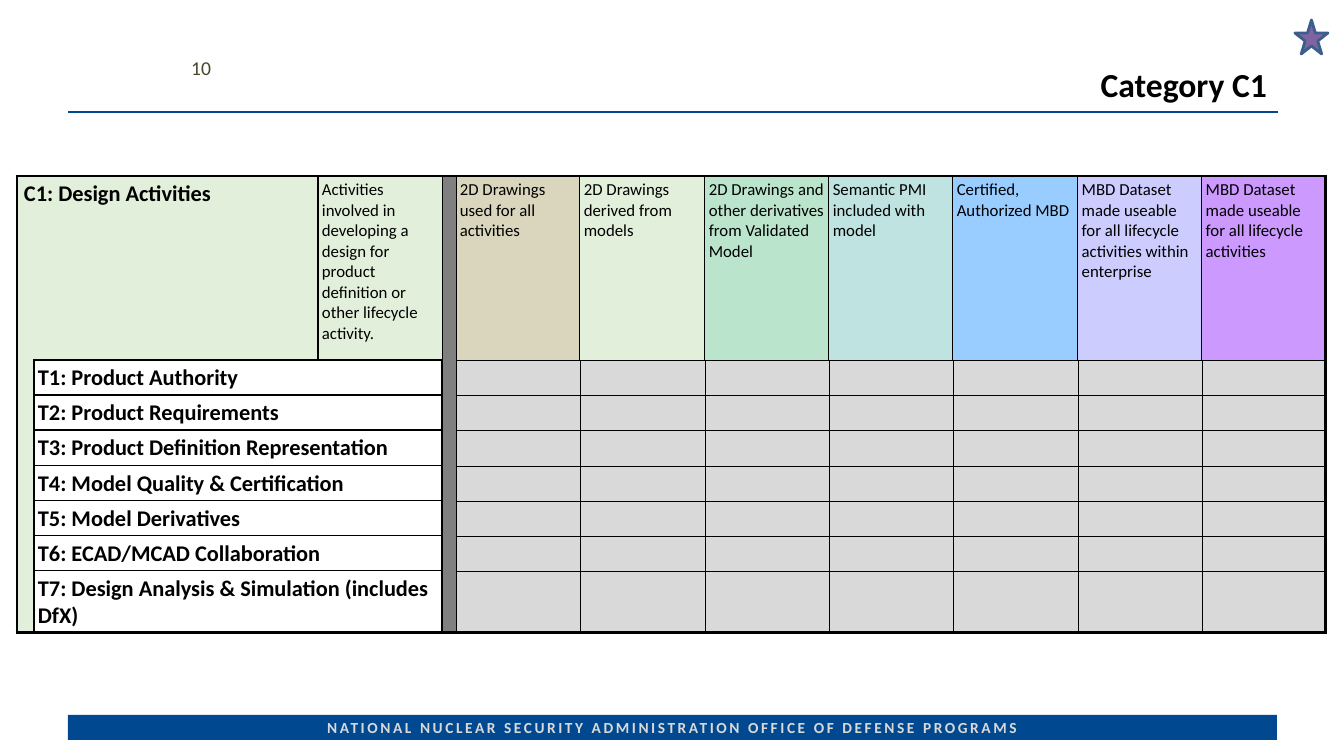
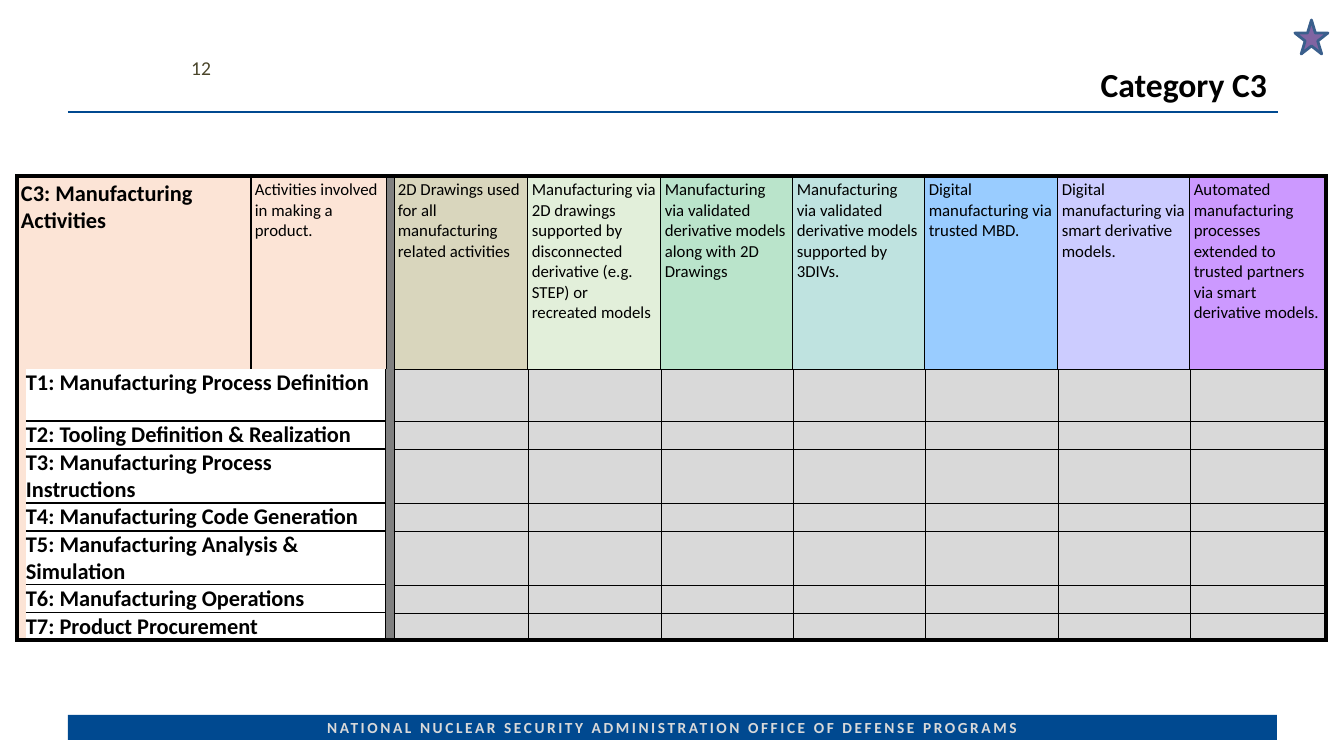
from lxml import etree
from pptx import Presentation
from pptx.dml.color import RGBColor
from pptx.enum.shapes import MSO_CONNECTOR, MSO_SHAPE
from pptx.enum.text import MSO_ANCHOR, PP_ALIGN
from pptx.oxml.ns import qn
from pptx.util import Emu, Pt

RECT, STAR = MSO_SHAPE.RECTANGLE, MSO_SHAPE.STAR_5_POINT
STRAIGHT = MSO_CONNECTOR.STRAIGHT
LEFT, CENTER, RIGHT = PP_ALIGN.LEFT, PP_ALIGN.CENTER, PP_ALIGN.RIGHT
TOP, MIDDLE, BOTTOM = MSO_ANCHOR.TOP, MSO_ANCHOR.MIDDLE, MSO_ANCHOR.BOTTOM

EMU_PER_PX = 914400 / 100.8
FONT = "Calibri"
PLAIN_TABLE = "{2D5ABB26-0587-4C30-8999-92F81FD0307C}"  # no style, no grid
COLORS = {
    "blue": "004990", "black": "000000", "white": "FFFFFF",
    "footer": "D9D9D9", "number": "4A452A",
    "star": "8064A2", "star_line": "3A5F8C",
    "spacer": "808080", "grid": "D9D9D9",
    "design": "E2EFDA", "making": "FCE4D6",
}
LEVEL_FILLS = ["D9D6BD", "E2EFDA", "BAE4CB", "BFE3E0", "99CCFF", "CCCCFF", "CC99FF"]
FOOTER = "NATIONAL NUCLEAR SECURITY ADMINISTRATION OFFICE OF DEFENSE PROGRAMS"
SPACER_COL, FIRST_LEVEL = 3, 4


def px(n):
    return Emu(round(n * EMU_PER_PX))


def rgb(name):
    return RGBColor.from_string(COLORS.get(name, name))


class Deck:
    """Holds the shared style and the current slide."""

    def __init__(self):
        self.prs = Presentation()
        self.prs.slide_width, self.prs.slide_height = px(1344), px(756)
        self.s = None

    def new_slide(self, title, number):
        self.s = self.prs.slides.add_slide(self.prs.slide_layouts[5])
        self.footer()
        self.rule(68, 1278, 112)
        self.title(title)
        self.page_number(number)
        self.star()

    # Text
    def add_text(self, tf, text, size, color="black", bold=False, align=LEFT,
                 anchor=TOP):
        tf.word_wrap = True
        tf.vertical_anchor = anchor
        p = tf.paragraphs[0]
        p.alignment = align
        r = p.add_run()
        r.text = text
        r.font.name, r.font.size, r.font.bold = FONT, Pt(size), bold
        r.font.color.rgb = rgb(color)
        return p, r

    def title(self, text):
        sp = self.s.shapes.title
        sp.left, sp.top, sp.width, sp.height = px(370), px(18), px(907), px(91)
        p, _ = self.add_text(sp.text_frame, text, 24, bold=True, align=RIGHT,
                             anchor=BOTTOM)
        p.line_spacing = 0.85

    def page_number(self, number):
        sp = self.s.shapes.add_textbox(px(175), px(48), px(46), px(40))
        self.add_text(sp.text_frame, str(number), 14, "number", align=RIGHT,
                      anchor=MIDDLE)

    # Shapes
    def shape(self, kind, x, y, w, h, fill, line=None, line_width=0):
        sp = self.s.shapes.add_shape(kind, px(x), px(y), px(w), px(h))
        sp.shadow.inherit = False
        sp.fill.solid()
        sp.fill.fore_color.rgb = rgb(fill)
        if line:
            sp.line.color.rgb = rgb(line)
            sp.line.width = Pt(line_width)
        else:
            sp.line.fill.background()
        return sp

    def footer(self):
        tf = self.shape(RECT, 68, 715, 1209, 25, "blue").text_frame
        self.margins(tf, 3)
        _, r = self.add_text(tf, FOOTER, 11, "footer", True, CENTER, MIDDLE)
        r.font._element.set("spc", "180")

    def star(self):
        self.shape(STAR, 1295, 20, 33, 34, "star", "star_line", 2)

    def rule(self, x1, x2, y):
        line = self.s.shapes.add_connector(STRAIGHT, px(x1), px(y), px(x2), px(y))
        line.line.color.rgb = rgb("blue")
        line.line.width = Pt(1.5)
        etree.SubElement(line._element.spPr, qn("a:effectLst"))

    # Tables
    def margins(self, box, side, left=None):
        box.margin_top = box.margin_right = box.margin_bottom = px(side)
        box.margin_left = px(side if left is None else left)

    def cell(self, cell, fill, borders, text="", size=12, bold=False, margin=0,
             left=None):
        tc_pr = cell._tc.get_or_add_tcPr()
        for side in "LRTB":
            if side in borders:
                ln = etree.SubElement(tc_pr, qn("a:ln" + side),
                                      w=str(Pt(borders[side])))
                solid = etree.SubElement(ln, qn("a:solidFill"))
                etree.SubElement(solid, qn("a:srgbClr"), val=COLORS["black"])
        cell.fill.solid()
        cell.fill.fore_color.rgb = rgb(fill)
        self.margins(cell, margin, left)
        if text:
            self.add_text(cell.text_frame, text, size, bold=bold)
        else:  # small type keeps an empty row from growing
            end = etree.SubElement(cell.text_frame.paragraphs[0]._p,
                                   qn("a:endParaRPr"))
            end.set("sz", "800")

    def maturity_table(self, cols, rows, heading, about, levels, tasks, tint,
                       outer, label_margin, heading_left, boxed_labels):
        frame = self.s.shapes.add_table(len(rows), len(cols), px(17), px(176),
                                        px(sum(cols)), px(sum(rows)))
        table = frame.table
        table.first_row = table.horz_banding = False
        table._tbl.tblPr.find(qn("a:tableStyleId")).text = PLAIN_TABLE
        for col, width in zip(table.columns, cols):
            col.width = px(width)
        for row, height in zip(table.rows, rows):
            row.height = px(height)
        last_row, last_col = len(rows) - 1, len(cols) - 1

        def put(row, col, fill, borders, *text, **style):
            edges = {"T": row == 0, "B": row == last_row,
                     "L": col == 0, "R": col == last_col}
            borders = borders | {k: outer for k, on in edges.items() if on}
            self.cell(table.cell(row, col), fill, borders, *text, **style)

        # Heading row
        table.cell(0, 0).merge(table.cell(0, 1))
        put(0, 0, tint, {"R": 1}, heading, 16, True, 4, left=heading_left)
        put(0, 2, tint, {"L": 1, "R": 0.5}, about, margin=4)
        put(0, SPACER_COL, "spacer", {"L": 0.5, "R": 0.5})
        for i, (level, fill) in enumerate(zip(levels, LEVEL_FILLS)):
            put(0, FIRST_LEVEL + i, fill,
                {"L": 1 if i else 0.5, "R": 1, "B": 0.25}, level, margin=4)

        # Task rows
        label_sides = "LTRB" if boxed_labels else "RB"
        for row, task in enumerate(tasks, 1):
            table.cell(row, 1).merge(table.cell(row, 2))
            put(row, 0, tint, {"R": 1} if boxed_labels else {})
            put(row, 1, "white", dict.fromkeys(label_sides, 1), task, 16, True,
                label_margin)
            put(row, SPACER_COL, "spacer", {"L": 1, "R": 0.25})
            for col in range(FIRST_LEVEL, len(cols)):
                put(row, col, "grid", dict.fromkeys("LTRB", 0.25))


def main():
    deck = Deck()

    # Category C1
    deck.new_slide("Category C1", 10)
    deck.maturity_table(
        cols=[17, 284, 124, 14, 124, 125, 124, 124, 125, 124, 124],
        rows=[184, 35, 35, 36, 35, 35, 35, 62],
        heading="C1: Design Activities",
        about="Activities involved in developing a design for product "
              "definition or other lifecycle activity.",
        levels=[
            "2D Drawings used for all activities",
            "2D Drawings derived from models",
            "2D Drawings and other derivatives from Validated Model",
            "Semantic PMI included with model",
            "Certified, Authorized MBD",
            "MBD Dataset made useable for all lifecycle activities within enterprise",
            "MBD Dataset made useable for all lifecycle activities",
        ],
        tasks=[
            "T1: Product Authority",
            "T2: Product Requirements",
            "T3: Product Definition Representation",
            "T4: Model Quality & Certification",
            "T5: Model Derivatives",
            "T6: ECAD/MCAD Collaboration",
            "T7: Design Analysis & Simulation (includes DfX)",
        ],
        tint="design", outer=2.25, label_margin=4, heading_left=7,
        boxed_labels=True)

    # Category C3
    deck.new_slide("Category C3", 12)
    deck.maturity_table(
        cols=[9, 225, 135, 8, 134, 133, 132, 132, 133, 132, 136],
        rows=[193, 52, 28, 54, 28, 54, 28, 27],
        heading="C3: Manufacturing Activities",
        about="Activities involved in making a product.",
        levels=[
            "2D Drawings used for all manufacturing related activities",
            "Manufacturing via 2D drawings supported by disconnected "
            "derivative (e.g. STEP) or recreated models",
            "Manufacturing via validated derivative models along with 2D Drawings",
            "Manufacturing via validated derivative models supported by 3DIVs.",
            "Digital manufacturing via trusted MBD.",
            "Digital manufacturing via smart derivative models.",
            "Automated manufacturing processes extended to trusted partners "
            "via smart derivative models.",
        ],
        tasks=[
            "T1: Manufacturing Process Definition",
            "T2: Tooling Definition & Realization",
            "T3: Manufacturing Process Instructions",
            "T4: Manufacturing Code Generation",
            "T5: Manufacturing Analysis & Simulation",
            "T6: Manufacturing Operations",
            "T7: Product Procurement",
        ],
        tint="making", outer=3, label_margin=0, heading_left=4,
        boxed_labels=False)

    deck.prs.save("out.pptx")


if __name__ == "__main__":
    main()
